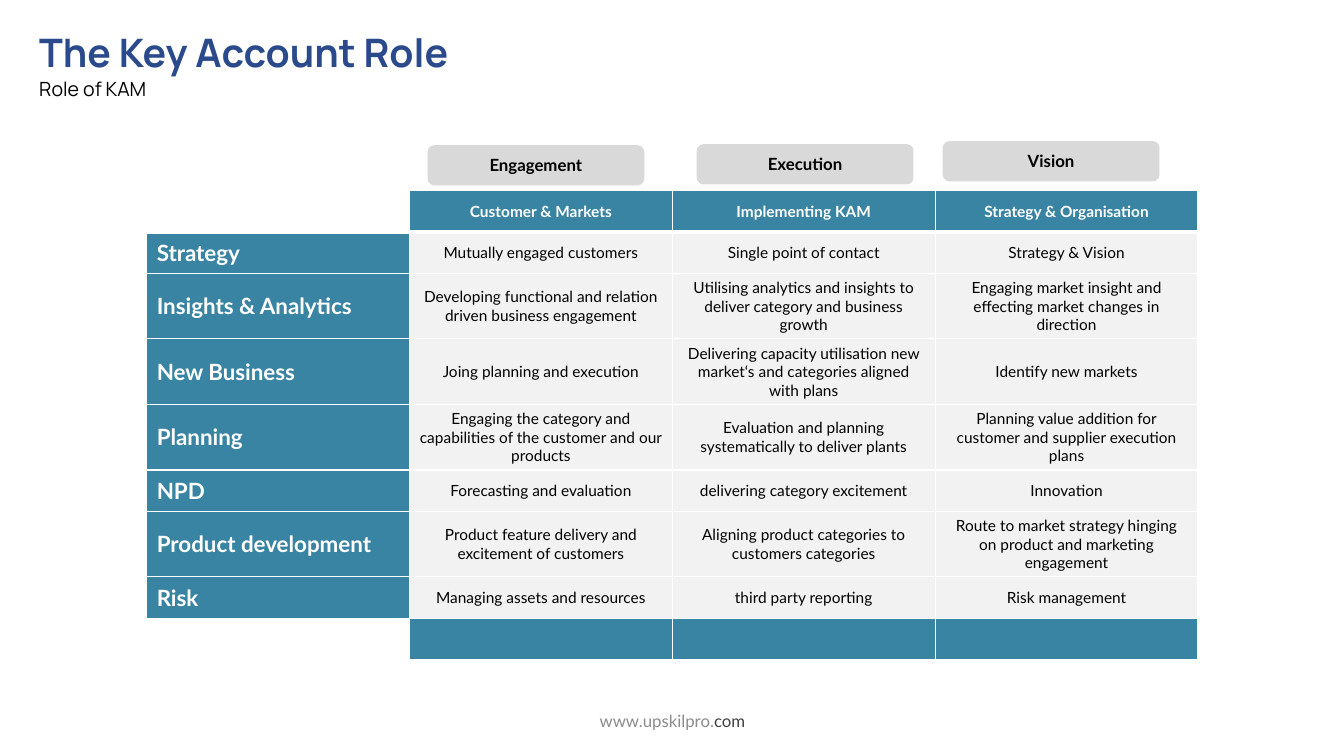
from dataclasses import dataclass

from lxml.etree import SubElement
from pptx import Presentation
from pptx.dml.color import RGBColor
from pptx.enum.shapes import MSO_SHAPE as Preset
from pptx.enum.text import MSO_ANCHOR as Anchor, MSO_AUTO_SIZE as AutoSize, PP_ALIGN as Align
from pptx.oxml.ns import qn
from pptx.util import Inches, Pt

COLUMN = ROW = Inches(0.1)
PAGE_COLUMNS, PAGE_ROWS = 133.3, 75
TABLE_COLUMN, TABLE_ROW = 26.07, 4.1
COLORS = {
    "title": "2A4A8B", "teal": "3984A3", "pale": "F2F2F2", "tab": "D9D9D9",
    "white": "FFFFFF", "black": "000000", "address": "8C8C8C", "domain": "404040",
}


@dataclass(frozen=True)
class Area:
    left: float
    top: float
    columns: float
    rows: float

    def lengths(self) -> tuple:
        return (int(self.left * COLUMN), int(self.top * ROW),
                int(self.columns * COLUMN), int(self.rows * ROW))


@dataclass(frozen=True)
class Style:
    size: float
    color: str
    bold: bool = False
    name: str = "Lato"
    align: Align = Align.CENTER


@dataclass(frozen=True)
class Tab:
    text: str
    left: float
    top: float


@dataclass(frozen=True)
class Topic:
    name: str
    engagement: str
    execution: str
    vision: str

    def texts(self) -> list:
        return [self.name, self.engagement, self.execution, self.vision]


TITLE = Style(28, "title", True, "Manrope", Align.LEFT)
SUBTITLE = Style(14, "black", False, "Manrope", Align.LEFT)
TAB = Style(12, "black", True)
HEADER = Style(11, "white", True)
TOPIC = Style(16, "white", True, align=Align.LEFT)
BODY = Style(11, "black")
FOOTER = Style(12, "address")

TABS = [
    Tab("Vision", 93.5, 14),
    Tab("Engagement", 42.4, 14.4),
    Tab("Execution", 69.1, 14.3),
]
TOPICS = [
    Topic("", "Customer & Markets", "Implementing KAM", "Strategy & Organisation"),
    Topic("Strategy", "Mutually engaged customers", "Single point of contact",
          "Strategy & Vision"),
    Topic("Insights & Analytics",
          "Developing functional and relation driven business engagement",
          "Utilising analytics and insights to deliver category and business growth",
          "Engaging market insight and effecting market changes in direction"),
    Topic("New Business", "Joing planning and execution",
          "Delivering capacity utilisation new market‘s and categories aligned with plans",
          "Identify new markets"),
    Topic("Planning",
          "Engaging the category and capabilities of the customer and our products",
          "Evaluation and planning systematically to deliver plants",
          "Planning value addition for customer and supplier execution plans"),
    Topic("NPD", "Forecasting and evaluation", "delivering category excitement",
          "Innovation"),
    Topic("Product development", "Product feature delivery and excitement of customers",
          "Aligning product categories to customers categories",
          "Route to market strategy hinging on product and marketing engagement"),
    Topic("Risk", "Managing assets and resources", "third party reporting",
          "Risk management"),
    Topic("", "", "", ""),
]


def color(name: str) -> RGBColor:
    return RGBColor.from_string(COLORS[name])


def write(para, text: str, style: Style) -> None:
    if text:
        para.add_run().text = text
    para.alignment = style.align
    para.font.size = Pt(style.size)
    para.font.name = style.name
    para.font.bold = style.bold
    para.font.color.rgb = color(style.color)


def add_text_box(page, area: Area):
    frame = page.shapes.add_textbox(*area.lengths()).text_frame
    frame.word_wrap = True
    return frame


def add_heading(page) -> None:
    frame = add_text_box(page, Area(2.9, 2.3, 70.1, 8.2))
    frame.auto_size = AutoSize.SHAPE_TO_FIT_TEXT
    write(frame.paragraphs[0], "The Key Account Role", TITLE)
    para = frame.add_paragraph()
    write(para, "Role of KAM", SUBTITLE)
    para.line_spacing = 1.07
    para.space_after = Pt(8)


def add_footer(page) -> None:
    frame = add_text_box(page, Area(44.2, 69.5, 45, 4))
    frame.vertical_anchor = Anchor.MIDDLE
    para = frame.paragraphs[0]
    write(para, "www.upskilpro.", FOOTER)
    span = para.add_run()
    span.text = "com"
    span.font.color.rgb = color("domain")


def add_tab(page, tab: Tab) -> None:
    box = page.shapes.add_shape(Preset.FLOWCHART_ALTERNATE_PROCESS,
                                *Area(tab.left, tab.top, 21.5, 4).lengths())
    box.shadow.inherit = False
    box.fill.solid()
    box.fill.fore_color.rgb = color("tab")
    box.line.fill.background()
    box.text_frame.word_wrap = True
    box.text_frame.vertical_anchor = Anchor.MIDDLE
    write(box.text_frame.paragraphs[0], tab.text, TAB)


def set_borders(cell, top: float, bottom: float) -> None:
    properties = cell._tc.get_or_add_tcPr()
    for side, width in (("lnL", 1), ("lnR", 1), ("lnT", top), ("lnB", bottom)):
        line = SubElement(properties, qn(f"a:{side}"), w=str(Pt(width)))
        fill = SubElement(line, qn("a:solidFill"))
        SubElement(fill, qn("a:srgbClr"), val=COLORS["white"])


def add_role_table(page) -> None:
    last = len(TOPICS) - 1
    area = Area(14.55, 18.9, 4 * TABLE_COLUMN, len(TOPICS) * TABLE_ROW)
    table = page.shapes.add_table(len(TOPICS), 4, *area.lengths()).table
    table.first_row = table.horz_banding = False
    for row, topic in enumerate(TOPICS):
        for column, text in enumerate(topic.texts()):
            cell = table.cell(row, column)
            edge = row in (0, last)
            if column == 0:
                fill, style = ("white" if edge else "teal"), TOPIC
            else:
                fill, style = ("teal", HEADER) if edge else ("pale", BODY)
            set_borders(cell, 3 if row == 1 else 1, 3 if row == 0 else 1)
            cell.fill.solid()
            cell.fill.fore_color.rgb = color(fill)
            cell.vertical_anchor = Anchor.MIDDLE
            write(cell.text_frame.paragraphs[0], text, style)


def main() -> None:
    deck = Presentation()
    deck.slide_width = int(PAGE_COLUMNS * COLUMN)
    deck.slide_height = int(PAGE_ROWS * ROW)
    page = deck.slides.add_slide(deck.slide_layouts[6])
    add_heading(page)
    add_footer(page)
    add_role_table(page)
    for tab in TABS:
        add_tab(page, tab)
    deck.save("out.pptx")


if __name__ == "__main__":
    main()
